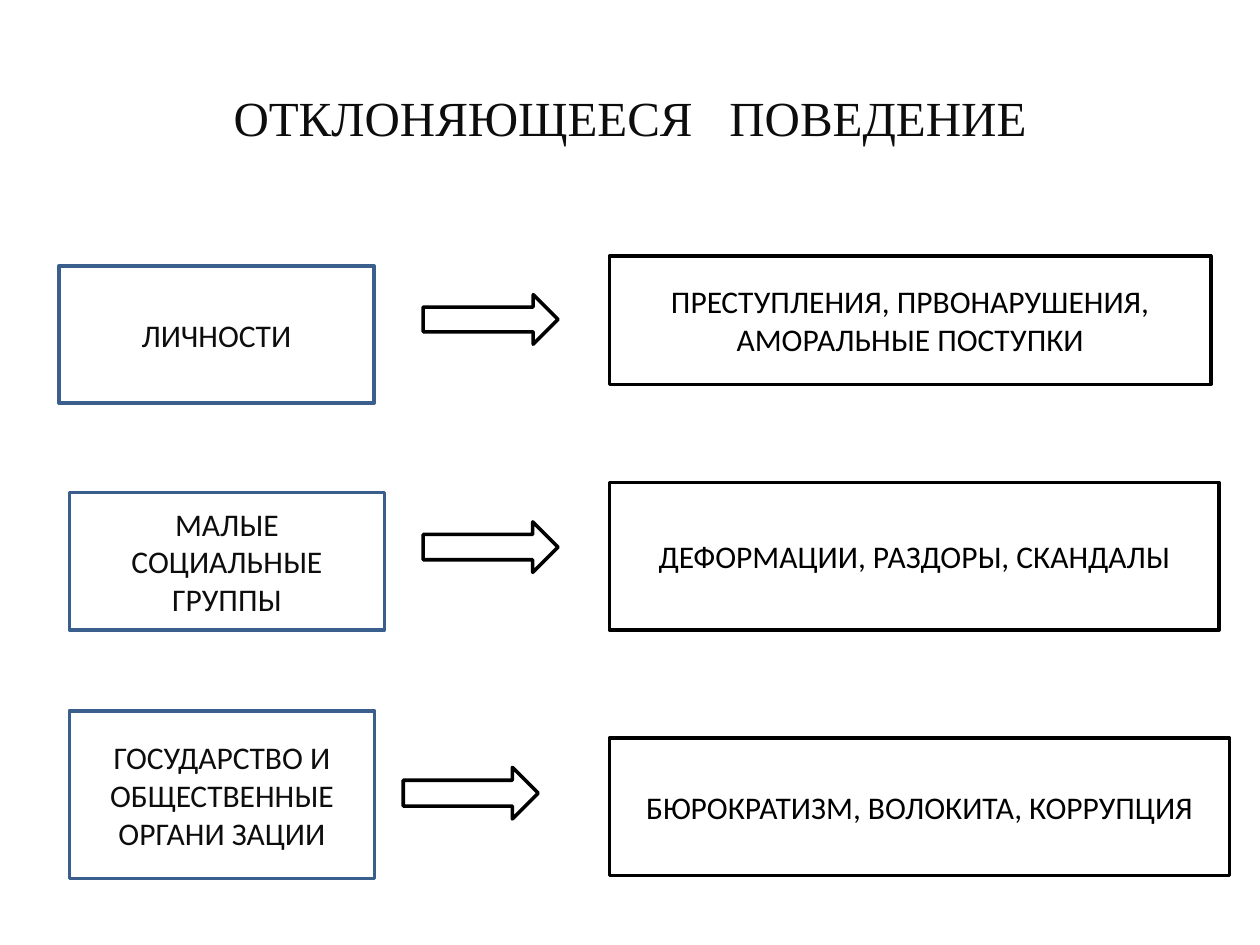
"""Build a slide linking social levels to their forms of deviant behaviour."""
from pptx import Presentation
from pptx.dml.color import RGBColor
from pptx.enum.shapes import MSO_SHAPE
from pptx.enum.text import MSO_ANCHOR, PP_ALIGN
from pptx.util import Cm, Pt

RECTANGLE = MSO_SHAPE.RECTANGLE
RIGHT_ARROW = MSO_SHAPE.RIGHT_ARROW
MIDDLE = MSO_ANCHOR.MIDDLE
CENTER = PP_ALIGN.CENTER

COLORS = {
    "white": "FFFFFF",
    "black": "000000",
    "ink": "0D0D0D",
    "blue": "3A5F8C",
}

TITLE_WORDS = ("ОТКЛОНЯЮЩЕЕСЯ", " ", "ПОВЕДЕНИЕ")

SUBJECTS = [
    ("ЛИЧНОСТИ", (1.19, 5.36, 6.35, 2.77)),
    ("МАЛЫЕ СОЦИАЛЬНЫЕ ГРУППЫ", (1.4, 9.93, 6.35, 2.77)),
    ("ГОСУДАРСТВО И ОБЩЕСТВЕННЫЕ\nОРГАНИ ЗАЦИИ", (1.4, 14.33, 6.15, 3.38)),
]

ARROWS = [
    (8.53, 5.94, 2.72, 1),
    (8.53, 10.52, 2.72, 1.02),
    (8.13, 15.47, 2.72, 1.04),
]

DEVIATIONS = [
    ("ПРЕСТУПЛЕНИЯ, ПРВОНАРУШЕНИЯ,\nАМОРАЛЬНЫЕ ПОСТУПКИ", (12.29, 5.16, 12.12, 2.59)),
    ("ДЕФОРМАЦИИ, РАЗДОРЫ, СКАНДАЛЫ", (12.29, 9.73, 12.29, 2.97)),
    ("БЮРОКРАТИЗМ, ВОЛОКИТА, КОРРУПЦИЯ", (12.29, 14.88, 12.5, 2.77)),
]


def color(name):
    """Return the named colour."""
    return RGBColor.from_string(COLORS[name])


def format_text(text_frame, font_name, size, color_name):
    """Centre the text both ways and format every run."""
    text_frame.word_wrap = True
    text_frame.vertical_anchor = MIDDLE
    for paragraph in text_frame.paragraphs:
        paragraph.alignment = CENTER
        for run in paragraph.runs:
            run.font.name = font_name
            run.font.size = Pt(size)
            run.font.color.rgb = color(color_name)


def add_title(slide):
    """Add the heading, with a widened space between its two words."""
    title = slide.shapes.add_textbox(Cm(1.27), Cm(0.76), Cm(22.86), Cm(3.18))
    paragraph = title.text_frame.paragraphs[0]
    for word in TITLE_WORDS:
        paragraph.add_run().text = word
    format_text(title.text_frame, "Times New Roman", 28, "ink")
    space = paragraph.runs[1]
    space._r.get_or_add_rPr().set("spc", "1400")


def add_outlined_shape(slide, kind, place, line_color):
    """Add a white preset shape with a coloured outline."""
    shape = slide.shapes.add_shape(kind, *map(Cm, place))
    shape.shadow.inherit = False
    shape.fill.solid()
    shape.fill.fore_color.rgb = color("white")
    shape.line.color.rgb = color(line_color)
    shape.line.width = Pt(2)
    return shape


def add_box(slide, text, place, line_color, text_color):
    """Add an outlined rectangle with centred text."""
    box = add_outlined_shape(slide, RECTANGLE, place, line_color)
    box.text_frame.text = text
    format_text(box.text_frame, "Calibri", 18, text_color)


def main():
    """Build and save the slide."""
    presentation = Presentation()
    presentation.slide_width = Cm(25.4)
    presentation.slide_height = Cm(19.05)
    slide = presentation.slides.add_slide(presentation.slide_layouts[6])
    add_title(slide)
    for text, place in SUBJECTS:
        add_box(slide, text, place, "blue", "ink")
    for place in ARROWS:
        add_outlined_shape(slide, RIGHT_ARROW, place, "black")
    for text, place in DEVIATIONS:
        add_box(slide, text, place, "black", "black")
    presentation.save("out.pptx")


if __name__ == "__main__":
    main()
